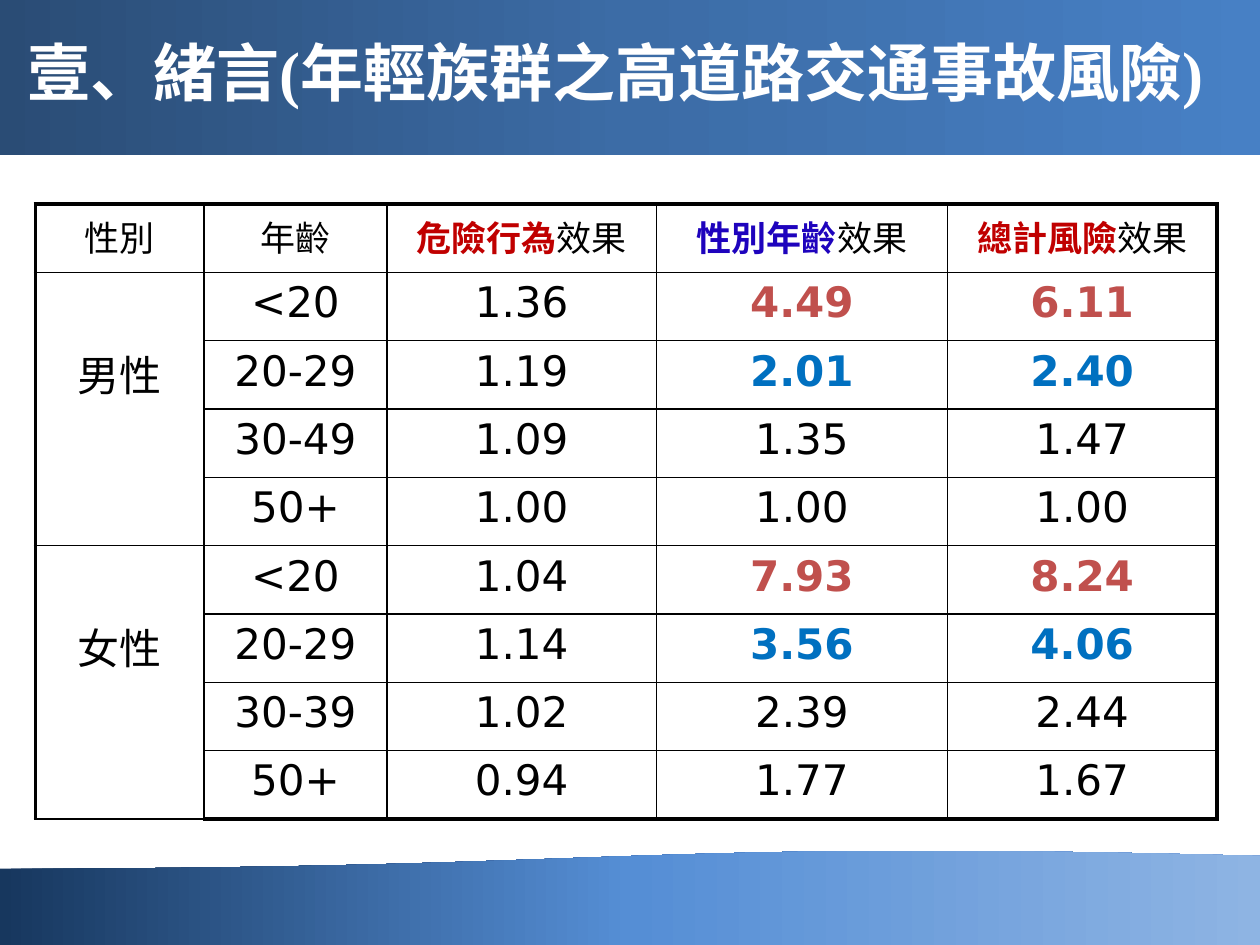
from dataclasses import dataclass

from lxml import etree
from pptx import Presentation, util as u
from pptx.dml.color import RGBColor
from pptx.enum import shapes, text
from pptx.oxml import parse_xml
from pptx.oxml.ns import nsdecls, qn

WIDTH, HEIGHT = u.Inches(10), u.Inches(7.5)
COLORS = {
    "black": "000000", "white": "FFFFFF", "risk": "C00000", "gender": "1E03BD",
    "under 20": "C0504D", "twenties": "0070C0",
}
LATIN, CJK, SERIF = "DejaVu Sans", "Noto Sans CJK SC", "Times New Roman"
THIN, THICK = u.Pt(1), u.Pt(2.25)


@dataclass
class Band:
    kind: shapes.MSO_SHAPE
    top: float  # share of slide height
    height: float  # share of slide height
    stops: tuple[str, str, str]
    angle: int = 0
    rotation: int = 0


@dataclass
class Piece:
    words: str
    color: str = "black"
    bold: bool = False


BANDS = [
    Band(shapes.MSO_SHAPE.FLOWCHART_DOCUMENT, 0.899, 0.102,
         ("17375E", "558ED5", "8EB4E3"), 180, 180),
    Band(shapes.MSO_SHAPE.RECTANGLE, 0, 0.164, ("2A4C75", "3C6CA6", "4780C5")),
]
TITLE = [("壹、緒言", CJK), ("(", SERIF), ("年輕族群之高道路交通事故風險", CJK), (")", SERIF)]
COLUMN_WIDTHS = [1.34, 1.45, 2.14, 2.31, 2.14]
TABLE_HEIGHT = 4.88
EFFECTS = [("危險行為", "risk"), ("性別年齡", "gender"), ("總計風險", "risk")]
GROUPS = {
    "男性": [("<20", "1.36", "4.49", "6.11"), ("20-29", "1.19", "2.01", "2.40"),
           ("30-49", "1.09", "1.35", "1.47"), ("50+", "1.00", "1.00", "1.00")],
    "女性": [("<20", "1.04", "7.93", "8.24"), ("20-29", "1.14", "3.56", "4.06"),
           ("30-39", "1.02", "2.39", "2.44"), ("50+", "0.94", "1.77", "1.67")],
}
HIGHLIGHTS = {"<20": "under 20", "20-29": "twenties"}


def rgb(name: str) -> RGBColor:
    return RGBColor.from_string(COLORS[name])


def set_east_asian(run, face: str) -> None:
    etree.SubElement(run.font._element, qn("a:ea")).set("typeface", face)


def draw_band(slide, band: Band) -> None:
    shape = slide.shapes.add_shape(
        band.kind, 0, int(HEIGHT * band.top), WIDTH, int(HEIGHT * band.height))
    shape.rotation = band.rotation
    shape.shadow.inherit = False
    shape.line.fill.background()
    stops = "".join(
        f'<a:gs pos="{i * 50000}"><a:srgbClr val="{color}"/></a:gs>'
        for i, color in enumerate(band.stops))
    gradient = parse_xml(
        f'<a:gradFill {nsdecls("a")} rotWithShape="1"><a:gsLst>{stops}</a:gsLst>'
        f'<a:lin ang="{band.angle * 60000}" scaled="0"/></a:gradFill>')
    shape.element.spPr.find(qn("a:prstGeom")).addnext(gradient)


def write_title(slide) -> None:
    title = slide.shapes.title
    title.left, title.top = int(WIDTH * 0.012), 0
    title.width, title.height = int(WIDTH * 0.976), int(HEIGHT * 0.164)
    frame = title.text_frame
    frame.word_wrap = True
    frame.auto_size = text.MSO_AUTO_SIZE.NONE
    frame.vertical_anchor = text.MSO_ANCHOR.MIDDLE
    line = frame.paragraphs[0]
    line.alignment = text.PP_ALIGN.LEFT
    line.line_spacing = 0.82
    for words, face in TITLE:
        run = line.add_run()
        run.text = words
        run.font.name, run.font.size, run.font.bold = face, u.Pt(36), True
        run.font.color.rgb = rgb("white")
        set_east_asian(run, face)
    slide.shapes._spTree.append(title.element)  # in front of the bands


def set_borders(cell, row: int, col: int, last_row: int, last_col: int) -> None:
    outer = {"L": col == 0, "R": col == last_col, "T": row == 0, "B": row == last_row}
    properties = cell._tc.get_or_add_tcPr()
    for i, (side, is_outer) in enumerate(outer.items()):
        properties.insert(i, parse_xml(
            f'<a:ln{side} {nsdecls("a")} w="{THICK if is_outer else THIN}"><a:solidFill>'
            f'<a:srgbClr val="{COLORS["black"]}"/></a:solidFill></a:ln{side}>'))


def write_cell(cell, pieces: list[Piece], size: int) -> None:
    line = cell.text_frame.paragraphs[0]
    line.alignment = text.PP_ALIGN.CENTER
    for piece in pieces:
        run = line.add_run()
        run.text = piece.words
        run.font.name, run.font.size = LATIN, u.Pt(size)
        run.font.bold = piece.bold
        run.font.color.rgb = rgb(piece.color)
        set_east_asian(run, CJK)


def draw_table(slide) -> None:
    row_count = 1 + sum(len(ages) for ages in GROUPS.values())
    col_count = len(COLUMN_WIDTHS)
    table = slide.shapes.add_table(
        row_count, col_count, u.Inches(0.28), u.Inches(1.62),
        u.Inches(sum(COLUMN_WIDTHS)), u.Inches(TABLE_HEIGHT)).table
    table.first_row = table.horz_banding = False
    for column, width in zip(table.columns, COLUMN_WIDTHS):
        column.width = u.Inches(width)
    for r in range(row_count):
        for c in range(col_count):
            cell = table.cell(r, c)
            cell.fill.background()
            set_borders(cell, r, c, row_count - 1, col_count - 1)

    # Header row
    headings = [[Piece("性別")], [Piece("年齡")]]
    headings += [[Piece(words, color, True), Piece("效果")] for words, color in EFFECTS]
    for c, pieces in enumerate(headings):
        write_cell(table.cell(0, c), pieces, 20)

    # One merged gender cell beside its age rows
    first = 1
    for gender, ages in GROUPS.items():
        gender_cell = table.cell(first, 0)
        gender_cell.merge(table.cell(first + len(ages) - 1, 0))
        gender_cell.margin_top = u.Inches(0.56)
        write_cell(gender_cell, [Piece(gender)], 24)
        for r, values in enumerate(ages, first):
            highlight = HIGHLIGHTS.get(values[0])
            for c, value in enumerate(values, 1):
                marked = c >= 3 and highlight is not None
                piece = Piece(value, highlight if marked else "black", marked)
                write_cell(table.cell(r, c), [piece], 24)
        first += len(ages)


def main() -> None:
    deck = Presentation()
    deck.slide_width, deck.slide_height = WIDTH, HEIGHT
    slide = deck.slides.add_slide(deck.slide_layouts.get_by_name("Title Only"))
    for band in BANDS:
        draw_band(slide, band)
    write_title(slide)
    draw_table(slide)
    deck.save("out.pptx")


if __name__ == "__main__":
    main()
